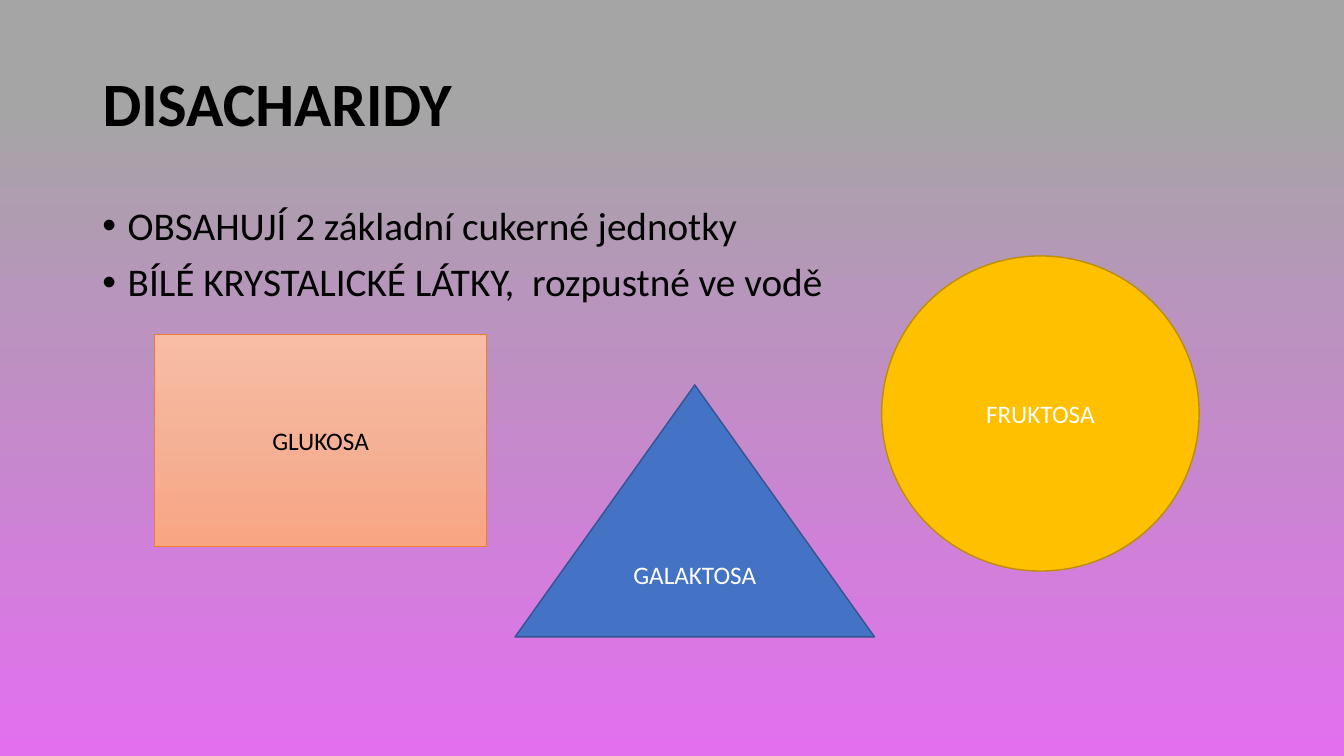
from copy import deepcopy

from lxml.etree import SubElement
from pptx import Presentation
from pptx.dml.color import RGBColor
from pptx.enum.shapes import MSO_SHAPE
from pptx.enum.text import MSO_ANCHOR, PP_ALIGN
from pptx.oxml.ns import qn
from pptx.util import Cm, Pt

BLACK = RGBColor(0x00, 0x00, 0x00)
WHITE = RGBColor(0xFF, 0xFF, 0xFF)
GREY = RGBColor(0xA5, 0xA5, 0xA5)
PINK = RGBColor(0xE3, 0x6F, 0xEF)
PALE = RGBColor(0xF7, 0xBD, 0xA5)
PEACH = RGBColor(0xF5, 0xB1, 0x96)
CORAL = RGBColor(0xF8, 0xA5, 0x82)
ORANGE = RGBColor(0xED, 0x7D, 0x31)
GOLD = RGBColor(0xFF, 0xC0, 0x00)
OCHRE = RGBColor(0xBD, 0x8E, 0x00)
BLUE = RGBColor(0x44, 0x72, 0xC4)
NAVY = RGBColor(0x32, 0x54, 0x91)

FONT = "Calibri"


def style(item, **format):
    for name, value in format.items():
        setattr(item, name, value)


def place(shape, left, top, width, height):
    box = dict(left=left, top=top, width=width, height=height)
    style(shape, **{name: Cm(value) for name, value in box.items()})


def write(par, text, size, color, bold=False, **format):
    run = par.add_run()
    run.text = text
    style(run.font, name=FONT, size=Pt(size), bold=bold)
    run.font.color.rgb = color
    style(par, **format)


def blend(fill, root, stops):
    """Fill from top to bottom with (position, colour) stops."""
    fill.gradient()
    fill.gradient_angle = 270
    group = next(root.iter(qn("a:gsLst")))
    while len(group) < len(stops):
        group.append(deepcopy(group[0]))
    for stop, (position, color) in zip(fill.gradient_stops, stops):
        stop.position = position
        stop.color.rgb = color


def bullet(par):
    props = par._p.get_or_add_pPr()
    props.set("marL", str(Cm(0.64)))
    props.set("indent", str(-Cm(0.64)))
    SubElement(props, qn("a:buFont"), typeface="Arial")
    SubElement(props, qn("a:buChar"), char="•")


def add_title(slide, text):
    title = slide.shapes.title
    place(title, 2.33, 0.84, 29.21, 3.68)
    title.text_frame.vertical_anchor = MSO_ANCHOR.MIDDLE
    write(title.text_frame.paragraphs[0], text, 44, BLACK, bold=True,
          alignment=PP_ALIGN.LEFT, line_spacing=0.9)


def add_list(slide, lines):
    box = slide.shapes.add_textbox(0, 0, 0, 0)
    place(box, 2.33, 5.08, 29.21, 12.09)
    frame = box.text_frame
    frame.word_wrap = True
    for index, line in enumerate(lines):
        par = frame.add_paragraph() if index else frame.paragraphs[0]
        write(par, line, 28, BLACK, line_spacing=0.9, space_before=Pt(10))
        bullet(par)


def add_sugar(slide, kind, box, text, fill, edge, width, color):
    shape = slide.shapes.add_shape(kind, 0, 0, 0, 0)
    place(shape, *box)
    shape.shadow.inherit = False
    if isinstance(fill, list):
        blend(shape.fill, shape._element, fill)
    else:
        shape.fill.solid()
        shape.fill.fore_color.rgb = fill
    shape.line.color.rgb = edge
    shape.line.width = Pt(width)
    style(shape.text_frame, word_wrap=True, vertical_anchor=MSO_ANCHOR.MIDDLE)
    write(shape.text_frame.paragraphs[0], text, 18, color,
          alignment=PP_ALIGN.CENTER)


def main():
    deck = Presentation()
    style(deck, slide_width=Cm(33.87), slide_height=Cm(19.05))
    slide = deck.slides.add_slide(deck.slide_layouts[5])

    # Background
    blend(slide.background.fill, slide._element, [(0.13, GREY), (1, PINK)])

    # Heading and facts
    add_title(slide, "DISACHARIDY")
    add_list(slide, ["OBSAHUJÍ 2 základní cukerné jednotky",
                     "BÍLÉ KRYSTALICKÉ LÁTKY,  rozpustné ve vodě"])

    # Sugar units
    add_sugar(slide, MSO_SHAPE.RECTANGLE, (3.89, 8.43, 8.38, 5.33), "GLUKOSA",
              [(0, PALE), (0.5, PEACH), (1, CORAL)], ORANGE, 0.5, BLACK)
    add_sugar(slide, MSO_SHAPE.OVAL, (22.22, 6.45, 8, 7.94), "FRUKTOSA",
              GOLD, OCHRE, 1, WHITE)
    add_sugar(slide, MSO_SHAPE.ISOSCELES_TRIANGLE, (12.98, 9.7, 9.06, 6.35),
              "GALAKTOSA", BLUE, NAVY, 1, WHITE)

    deck.save("out.pptx")


if __name__ == "__main__":
    main()
